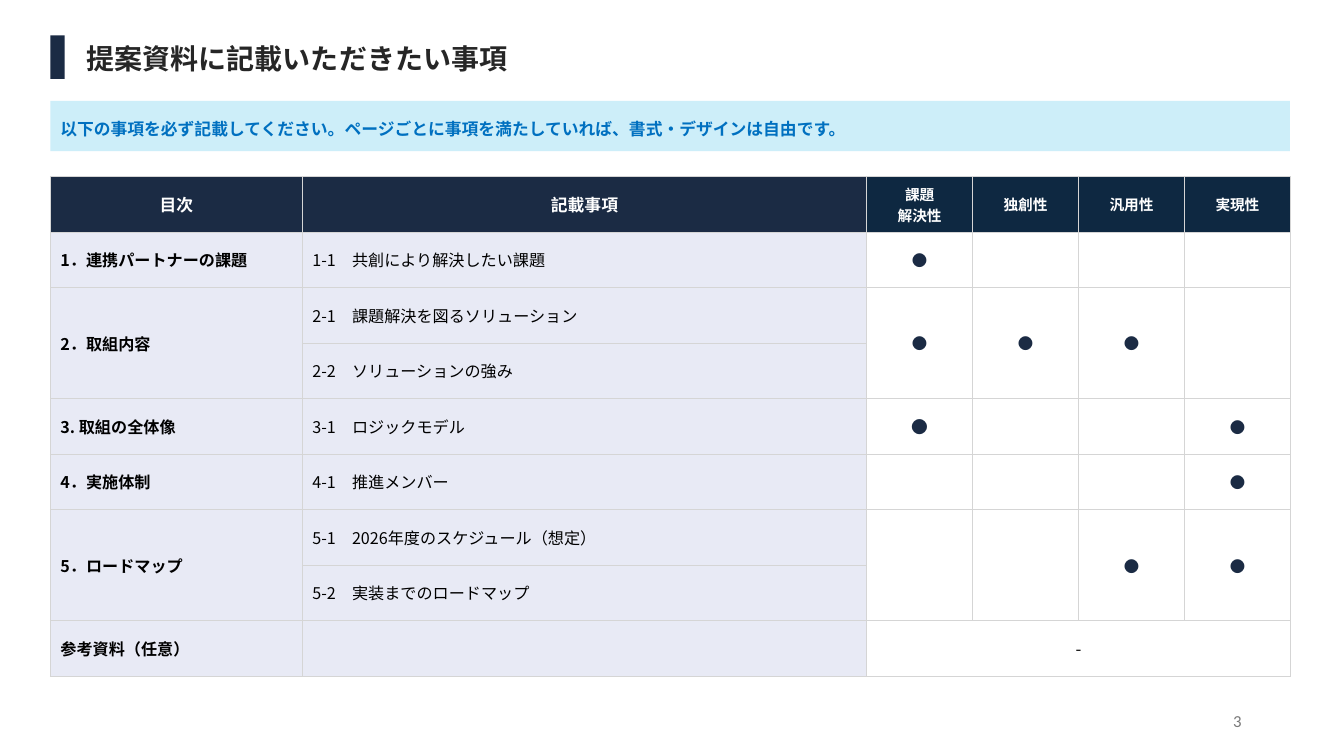
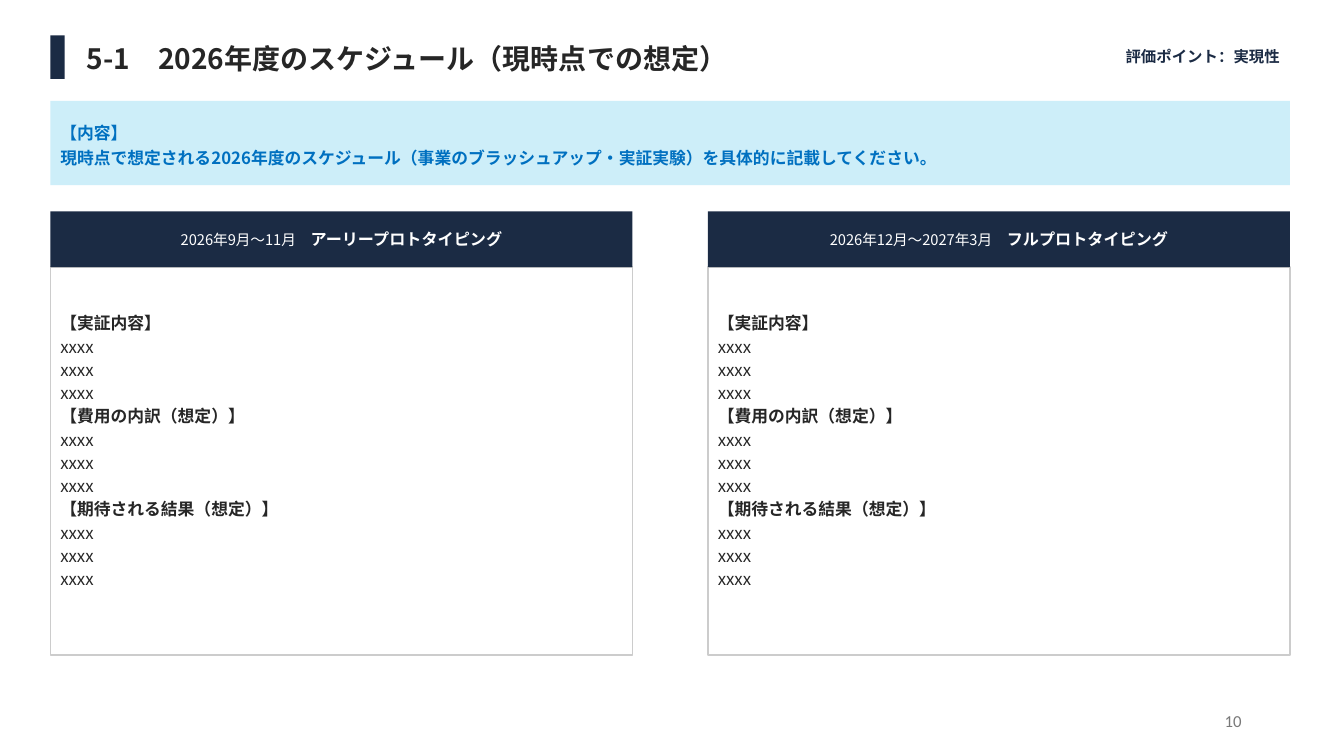
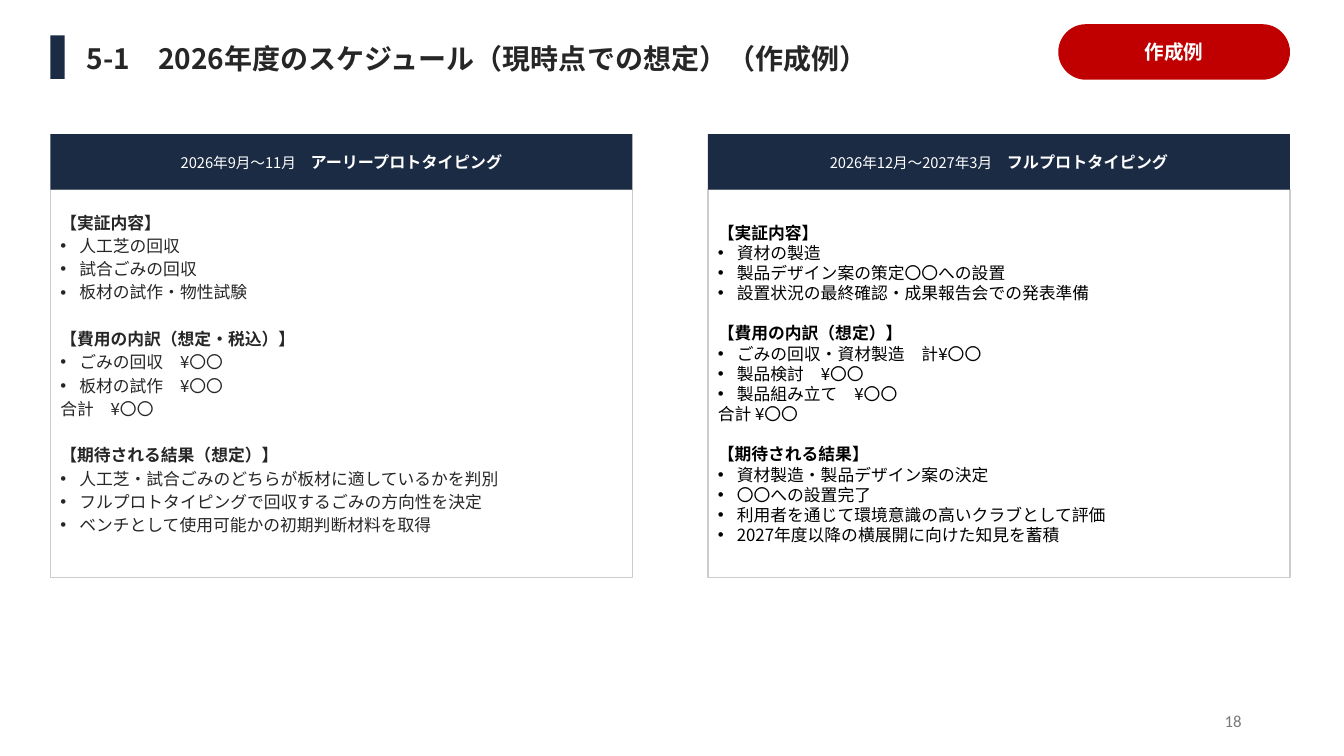
"""Build three proposal-template slides: contents table, schedule form and filled-in example."""
from lxml.etree import SubElement
from pptx import Presentation
from pptx.dml.color import RGBColor
from pptx.enum.shapes import MSO_SHAPE as Shape
from pptx.enum.text import MSO_ANCHOR as Anchor, MSO_AUTO_SIZE as AutoSize, PP_ALIGN as Align
from pptx.oxml.ns import qn
from pptx.util import Cm, Pt

NAVY = RGBColor(0x1B, 0x2B, 0x44)
DEEP_NAVY = RGBColor(0x0E, 0x28, 0x41)
SKY = RGBColor(0xCD, 0xEE, 0xF9)
BLUE = RGBColor(0x00, 0x70, 0xC0)
LAVENDER = RGBColor(0xE8, 0xEA, 0xF5)
RED = RGBColor(0xC0, 0x00, 0x00)
INK = RGBColor(0x26, 0x26, 0x26)
BLACK = RGBColor(0x00, 0x00, 0x00)
WHITE = RGBColor(0xFF, 0xFF, 0xFF)
PAGE_GRAY = RGBColor(0x79, 0x79, 0x79)
BORDER_GRAY = RGBColor(0xCC, 0xCC, 0xCC)
GRID_GRAY = "D5D5D5"
JP_FONT = "Noto Sans CJK JP"

LEFT, WIDTH = 1.27, 31.24
PANEL_WIDTH, PANEL_HEAD, PANEL_BODY = 14.67, 1.4, 9.78
PANEL_LEFTS = (LEFT, LEFT + WIDTH - PANEL_WIDTH)


def add_box(slide, left, top, width, height, fill=None, line=None, kind=Shape.RECTANGLE):
    """Add a flat shape, with sizes in centimetres."""
    box = slide.shapes.add_shape(kind, Cm(left), Cm(top), Cm(width), Cm(height))
    box.shadow.inherit = False
    if fill is None:
        box.fill.background()
    else:
        box.fill.solid()
        box.fill.fore_color.rgb = fill
    if line is None:
        box.line.fill.background()
    else:
        box.line.color.rgb = line
        box.line.width = Pt(1)
    return box


def write(frame, lines, size, color, bold=False, font=JP_FONT, layout=None):
    """Write lines; a line is a string or a list of (text, run format) pairs."""
    for index, line in enumerate(lines):
        paragraph = frame.paragraphs[0] if index == 0 else frame.add_paragraph()
        for name, value in {"alignment": Align.LEFT, **(layout or {})}.items():
            setattr(paragraph, name, value)
        for text, changes in [(line, {})] if isinstance(line, str) else line:
            run = paragraph.add_run()
            run.text = text
            run.font.color.rgb = color
            look = {"name": font, "size": Pt(size), "bold": bold, **changes}
            for name, value in look.items():
                setattr(run.font, name, value)
            SubElement(run.font._element, qn("a:ea"), typeface=font)


deck = Presentation()
deck.slide_width, deck.slide_height = Cm(33.87), Cm(19.05)

headings = [
    ("提案資料に記載いただきたい事項", "3"),
    ("5-1　2026年度のスケジュール（現時点での想定）", "10"),
    ("5-1　2026年度のスケジュール（現時点での想定）（作成例）", "18"),
]
for heading, page in headings:
    slide = deck.slides.add_slide(deck.slide_layouts[5])
    add_box(slide, LEFT, 0.89, 0.36, 1.1, NAVY)
    title = slide.shapes.title
    place = {"left": Cm(1.93), "top": Cm(0.91), "width": Cm(30.81), "height": Cm(1.1)}
    for name, value in place.items():
        setattr(title, name, value)
    folio = slide.shapes.add_textbox(Cm(23.92), Cm(17.65), Cm(7.62), Cm(1.02))
    for frame in (title.text_frame, folio.text_frame):
        frame.word_wrap = True
        frame.auto_size = AutoSize.NONE
        frame.vertical_anchor = Anchor.MIDDLE
    write(title.text_frame, [heading], 20, INK, True)
    write(folio.text_frame, [page], 12, PAGE_GRAY, font="Calibri", layout={"alignment": Align.RIGHT})

contents, form, example = deck.slides

notices = [
    (contents, 1.27, ["以下の事項を必ず記載してください。ページごとに事項を満たしていれば、書式・デザインは自由です。"]),
    (form, 2.13, ["【内容】", "現時点で想定される2026年度のスケジュール（事業のブラッシュアップ・実証実験）を具体的に記載してください。"]),
]
for slide, height, lines in notices:
    notice = add_box(slide, LEFT, 2.54, WIDTH, height, SKY)
    write(notice.text_frame, lines, 12, BLUE, True, layout={"line_spacing": Pt(18)})

columns = ["目次", "記載事項", "課題\n解決性", "独創性", "汎用性", "実現性"]
sections = [
    ("1．連携パートナーの課題", ["1-1　共創により解決したい課題"], {2: 11}),
    ("2．取組内容", ["2-1　課題解決を図るソリューション", "2-2　ソリューションの強み"], {2: 11, 3: 11, 4: 11}),
    ("3. 取組の全体像", ["3-1　ロジックモデル"], {2: 12, 5: 11}),
    ("4．実施体制", ["4-1　推進メンバー"], {5: 11}),
    ("5．ロードマップ", ["5-1　2026年度のスケジュール（想定）", "5-2　実装までのロードマップ"], {4: 11, 5: 11}),
    ("参考資料（任意）", [""], {}),
]
row_count = 1 + sum(len(topics) for _, topics, _ in sections)
criteria = contents.shapes.add_table(
    row_count, len(columns), Cm(LEFT), Cm(4.45), Cm(WIDTH), Cm(1.4 * row_count)
).table
criteria.horz_banding = False
criteria.first_row = False
for column, width in zip(criteria.columns, [6.35, 14.22] + [2.67] * 4):
    column.width = Cm(width)
for row_index, row in enumerate(criteria.rows):
    row.height = Cm(1.4)
    for column_index, cell in enumerate(row.cells):
        cell.vertical_anchor = Anchor.MIDDLE
        properties = cell._tc.get_or_add_tcPr()
        for side in ("a:lnL", "a:lnR", "a:lnT", "a:lnB"):
            edge = SubElement(properties, qn(side), w=str(Pt(0.75)))
            SubElement(SubElement(edge, qn("a:solidFill")), qn("a:srgbClr"), val=GRID_GRAY)
        if row_index and column_index > 1:
            cell.fill.background()
        else:
            cell.fill.solid()
            head_color = NAVY if column_index < 2 else DEEP_NAVY
            cell.fill.fore_color.rgb = LAVENDER if row_index else head_color

centered = {"alignment": Align.CENTER}
for index, label in enumerate(columns):
    write(criteria.cell(0, index).text_frame, label.split("\n"), 12 if index < 2 else 10.5, WHITE, True, layout=centered)
row_index = 1
for section, topics, marks in sections:
    last_row = row_index + len(topics) - 1
    if len(topics) > 1:
        for index in (0, 2, 3, 4, 5):
            criteria.cell(row_index, index).merge(criteria.cell(last_row, index))
    write(criteria.cell(row_index, 0).text_frame, [section], 11.5, BLACK, True)
    for offset, topic in enumerate(topics):
        if topic:
            write(criteria.cell(row_index + offset, 1).text_frame, [topic], 11.5, BLACK)
    for index, size in marks.items():
        write(criteria.cell(row_index, index).text_frame, ["●"], size, NAVY, True, layout=centered)
    row_index = last_row + 1
optional = criteria.cell(row_count - 1, 2)
optional.merge(criteria.cell(row_count - 1, 5))
write(optional.text_frame, ["-"], 12, BLACK, layout=centered)

viewpoint = form.shapes.add_textbox(Cm(22.86), Cm(0.89), Cm(9.65), Cm(1.07)).text_frame
viewpoint.word_wrap = True
viewpoint.vertical_anchor = Anchor.MIDDLE
write(viewpoint, ["評価ポイント：実現性"], 11, NAVY, True, layout={"alignment": Align.RIGHT})

badge = add_box(example, 26.67, 0.61, 5.84, 1.4, RED, kind=Shape.ROUNDED_RECTANGLE)
badge.adjustments[0] = 0.5
write(badge.text_frame, ["作成例"], 14, WHITE, True, layout=centered)

phases = [("2026年9月〜11月　", "アーリープロトタイピング"), ("2026年12月～2027年3月　", "フルプロトタイピング")]
blank_plan = []
for topic in ("【実証内容】", "【費用の内訳（想定）】", "【期待される結果（想定）】"):
    blank_plan += [topic] + ["xxxx"] * 3
early_plan = [
    "【実証内容】", "人工芝の回収", "試合ごみの回収", "板材の試作・物性試験",
    "【費用の内訳（想定・税込）】", "ごみの回収　¥〇〇", "板材の試作　¥〇〇", "合計　¥〇〇",
    "【期待される結果（想定）】", "人工芝・試合ごみのどちらが板材に適しているかを判別",
    "フルプロトタイピングで回収するごみの方向性を決定", "ベンチとして使用可能かの初期判断材料を取得",
]
full_plan = [
    "【実証内容】", "資材の製造", "製品デザイン案の策定〇〇への設置", "設置状況の最終確認・成果報告会での発表準備",
    "【費用の内訳（想定）】", "ごみの回収・資材製造　計¥〇〇", "製品検討　¥〇〇", "製品組み立て　¥〇〇", "合計 ¥〇〇",
    "【期待される結果】", "資材製造・製品デザイン案の決定", "〇〇への設置完了",
    "利用者を通じて環境意識の高いクラブとして評価", "2027年度以降の横展開に向けた知見を蓄積",
]
panels = [
    (form, 0, 5.33, blank_plan, INK, 16.6, 0.71),
    (form, 1, 5.33, blank_plan, INK, 16.6, 0.71),
    (example, 0, 3.38, early_plan, INK, 16.6, 0.71),
    (example, 1, 3.38, full_plan, BLACK, 14.4, 0.13),
]
for slide, phase, top, plan, color, pitch, bottom_inset in panels:
    left = PANEL_LEFTS[phase]
    period, stage = phases[phase]
    body = add_box(slide, left, top + PANEL_HEAD, PANEL_WIDTH, PANEL_BODY, line=BORDER_GRAY).text_frame
    body.margin_bottom = Cm(bottom_inset)
    lines = [[(text, {"bold": text.startswith("【")})] for text in plan]
    write(body, lines, 12, color, layout={"line_spacing": Pt(pitch)})
    if slide is example:
        for index, (text, paragraph) in enumerate(zip(plan, body.paragraphs)):
            if text.startswith("【"):
                paragraph.space_before = Pt(pitch if index else 0)
            elif not text.startswith("合計"):
                bullet = paragraph._p.get_or_add_pPr()
                bullet.set("marL", str(Cm(0.48)))
                bullet.set("indent", str(-Cm(0.48)))
                SubElement(bullet, qn("a:buFont"), typeface="Arial")
                SubElement(bullet, qn("a:buChar"), char="•")
    header = add_box(slide, left, top, PANEL_WIDTH, PANEL_HEAD, NAVY).text_frame
    for side in ("left", "right", "top", "bottom"):
        setattr(header, f"margin_{side}", 0)
    header_line = [(period, {}), (stage, {"size": Pt(11.5), "bold": True})]
    write(header, [header_line], 10.5, WHITE, layout=centered)

deck.save("out.pptx")
